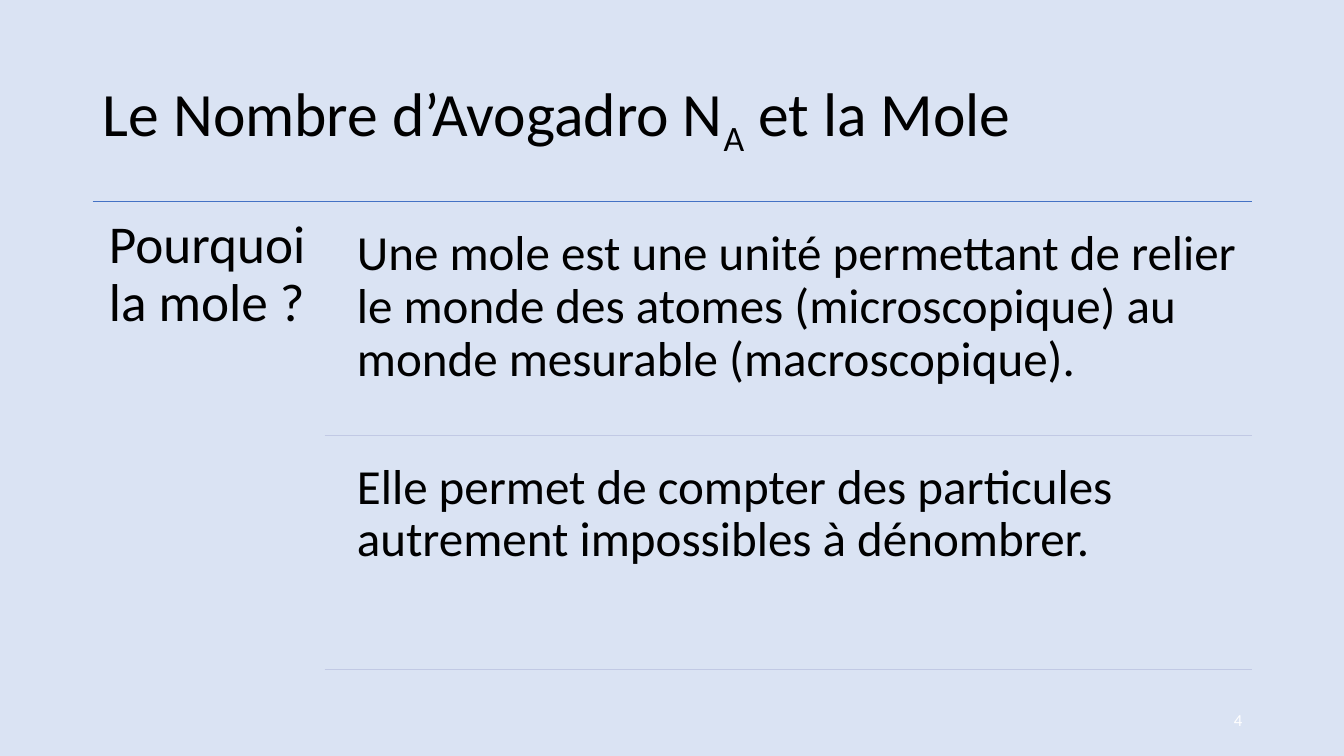
from lxml import etree
from pptx import Presentation
from pptx.dml.color import RGBColor
from pptx.enum.shapes import MSO_CONNECTOR
from pptx.enum.text import MSO_ANCHOR, MSO_AUTO_SIZE, PP_ALIGN
from pptx.oxml.ns import qn
from pptx.util import Inches, Pt

STRAIGHT = MSO_CONNECTOR.STRAIGHT
TOP, MIDDLE = MSO_ANCHOR.TOP, MSO_ANCHOR.MIDDLE
LEFT, RIGHT = PP_ALIGN.LEFT, PP_ALIGN.RIGHT
FIXED = MSO_AUTO_SIZE.NONE
color = RGBColor.from_string

prs = Presentation()
prs.slide_width, prs.slide_height = Inches(13.33), Inches(7.5)
slide = prs.slides.add_slide(prs.slide_layouts[5])
slide.background.fill.solid()
slide.background.fill.fore_color.rgb = color("DAE3F3")


def write(box, place, parts, size, inset=0.1, tint="000000", align=LEFT, anchor=TOP):
    box.left, box.top, box.width, box.height = [Inches(n) for n in place]
    frame = box.text_frame
    frame.word_wrap, frame.auto_size = True, FIXED
    frame.vertical_anchor = anchor
    frame.margin_left = frame.margin_right = Inches(inset)
    frame.margin_top = frame.margin_bottom = Inches(inset / 2 if inset == 0.1 else inset)
    para = frame.paragraphs[0]
    para.alignment, para.line_spacing = align, 0.9
    para.font.name, para.font.size = "Calibri", Pt(size)
    para.font.color.rgb = color(tint)
    for part in parts:
        para.add_run().text = part
    return para


def rule(left, y, tint):
    line = slide.shapes.add_connector(
        STRAIGHT, Inches(left), Inches(y), Inches(12.42), Inches(y))
    line.line.color.rgb = color(tint)
    line.line.width = Pt(1)
    etree.SubElement(line._element.spPr, qn("a:effectLst"))


# Title with subscript
title = write(slide.shapes.title, (0.92, 0.4, 11.5, 1.45),
              ["Le Nombre d’Avogadro N", "A", " et la Mole"], 44, anchor=MIDDLE)
title.runs[1].font._element.set("baseline", "-25000")

# Question on the left
rule(0.92, 2, "4472C4")
ask = slide.shapes.add_textbox(0, 0, 0, 0)
write(ask, (0.92, 2, 2.3, 4.76), ["Pourquoi la mole ?"], 38, inset=0.16)

# Answers, each closed by a rule
answers = [
    "Une mole est une unité permettant de relier le monde des atomes "
    "(microscopique) au monde mesurable (macroscopique).",
    "Elle permet de compter des particules autrement impossibles à dénombrer.",
]
for row, answer in enumerate(answers):
    top = 2.11 + row * 2.32
    box = slide.shapes.add_textbox(0, 0, 0, 0)
    write(box, (3.39, top, 9.03, 2.21), [answer], 35, inset=0.15)
    rule(3.22, top + 2.21, "C1C9E4")

# Slide number
number = slide.shapes.add_textbox(0, 0, 0, 0)
write(number, (9.42, 6.95, 3, 0.4), ["4"], 12, tint="FFFFFF", align=RIGHT, anchor=MIDDLE)

prs.save("out.pptx")
